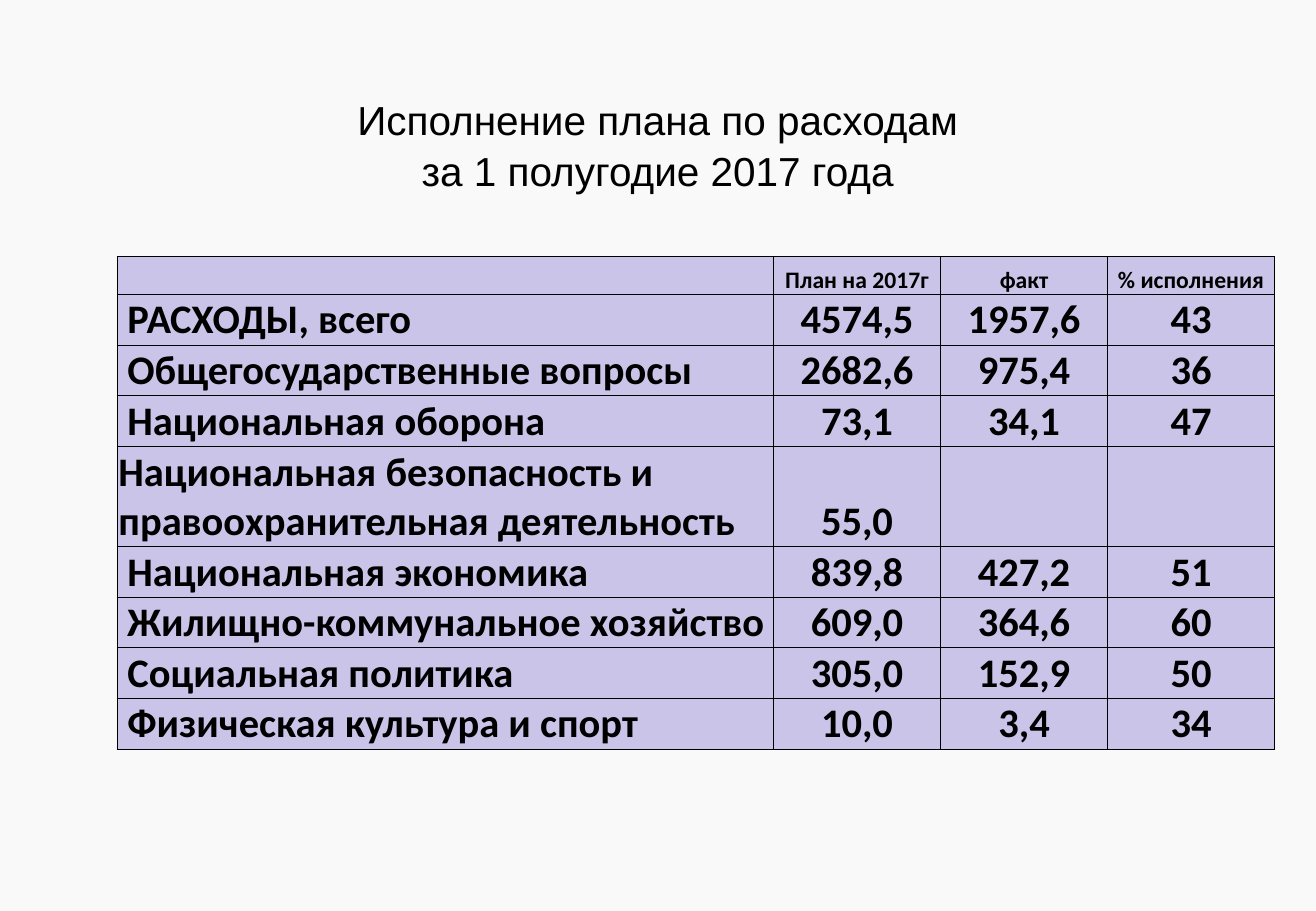
from lxml import etree
from pptx import Presentation
from pptx.dml.color import RGBColor
from pptx.enum import text as t
from pptx.oxml import ns
from pptx.util import Pt

BLACK = RGBColor(0x00, 0x00, 0x00)
LILAC = RGBColor(0xCB, 0xC4, 0xE9)
PALE_GREY = RGBColor(0xF9, 0xF9, 0xF9)

TITLE = ["Исполнение плана по расходам", "за 1 полугодие 2017 года"]
HEADER = ["", "План на 2017г", "факт", "% исполнения"]
EXPENSES = [
    ["РАСХОДЫ, всего", "4574,5", "1957,6", "43"],
    ["Общегосударственные вопросы", "2682,6", "975,4", "36"],
    ["Национальная оборона", "73,1", "34,1", "47"],
    ["Национальная безопасность и правоохранительная деятельность", "55,0", "", ""],
    ["Национальная экономика", "839,8", "427,2", "51"],
    ["Жилищно-коммунальное хозяйство", "609,0", "364,6", "60"],
    ["Социальная политика", "305,0", "152,9", "50"],
    ["Физическая культура и спорт", "10,0", "3,4", "34"],
]
WRAPPED_ROW = 4
COLUMN_WIDTHS = [389, 99, 99, 99]
ROW_HEIGHTS = [22.5, 30, 30, 30, 59.5, 30, 30, 30, 30]


def write_text(paragraph, content, size=24, font="Calibri", bold=False,
               align=t.PP_ALIGN.CENTER, before=0):
    paragraph.alignment = align
    paragraph.space_before = Pt(before)
    for style in (paragraph.font, paragraph.add_run().font if content else None):
        if style is not None:
            style.size = Pt(size)
            style.name = font
            style.bold = bold
            style.color.rgb = BLACK
    if content:
        paragraph.runs[0].text = content
    else:
        end = etree.SubElement(paragraph._p, ns.qn("a:endParaRPr"))
        end.set("sz", str(size * 100))


class ReportSlide:
    def __init__(self, presentation):
        self.slide = presentation.slides.add_slide(presentation.slide_layouts[5])
        background = self.slide.background.fill
        background.solid()
        background.fore_color.rgb = PALE_GREY
        self.border_width = Pt(0.5)

    def title(self, lines, left, top, width, height):
        shape = self.slide.shapes.title
        shape.left, shape.top = Pt(left), Pt(top)
        shape.width, shape.height = Pt(width), Pt(height)
        frame = shape.text_frame
        frame.word_wrap = True
        frame.auto_size = t.MSO_AUTO_SIZE.NONE
        frame.vertical_anchor = t.MSO_ANCHOR.MIDDLE
        frame.margin_right = Pt(14)
        for index, line in enumerate(lines):
            paragraph = frame.add_paragraph() if index else frame.paragraphs[0]
            write_text(paragraph, line, font="Arial", before=1.5 * index)

    def table(self, rows, left, top):
        shape = self.slide.shapes.add_table(
            len(rows), len(COLUMN_WIDTHS), Pt(left), Pt(top),
            Pt(sum(COLUMN_WIDTHS)), Pt(sum(ROW_HEIGHTS)))
        table = shape.table
        table.first_row = table.horz_banding = False
        for column, width in zip(table.columns, COLUMN_WIDTHS):
            column.width = Pt(width)
        for row, height in zip(table.rows, ROW_HEIGHTS):
            row.height = Pt(height)
        for row, values in enumerate(rows):
            for column, value in enumerate(values):
                self.cell(table.cell(row, column), value, row, column)

    def cell(self, cell, value, row, column):
        indented = column == 0 and row != WRAPPED_ROW
        cell.margin_left = Pt(6 if indented else 0.7)
        cell.margin_right = cell.margin_top = Pt(0.7)
        cell.margin_bottom = Pt(0)
        cell.vertical_anchor = t.MSO_ANCHOR.BOTTOM
        self.borders(cell)
        cell.fill.solid()
        cell.fill.fore_color.rgb = LILAC
        write_text(cell.text_frame.paragraphs[0], value,
                   size=24 if row else 14, bold=True,
                   align=t.PP_ALIGN.CENTER if column else t.PP_ALIGN.LEFT)

    def borders(self, cell):
        properties = cell._tc.get_or_add_tcPr()
        for side in ("L", "R", "T", "B"):
            line = etree.SubElement(properties, ns.qn("a:ln" + side))
            line.set("w", str(self.border_width))
            fill = etree.SubElement(line, ns.qn("a:solidFill"))
            etree.SubElement(fill, ns.qn("a:srgbClr")).set("val", str(BLACK))


def main():
    presentation = Presentation()
    presentation.slide_width = Pt(780)
    presentation.slide_height = Pt(540)
    report = ReportSlide(presentation)
    report.table([HEADER] + EXPENSES, 69.5, 152)
    report.title(TITLE, 72.7, 53, 641, 66)
    presentation.save("out.pptx")


if __name__ == "__main__":
    main()
